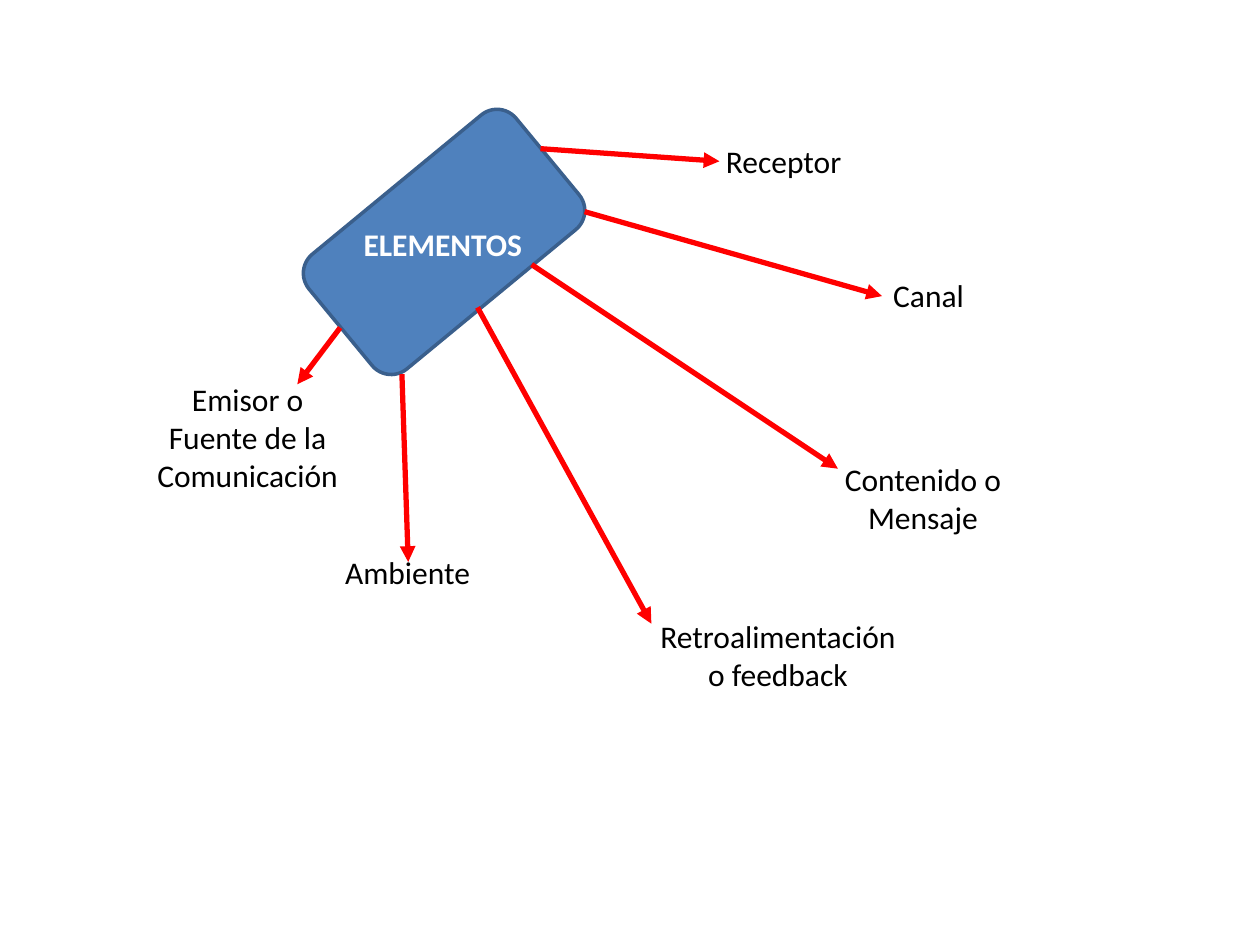
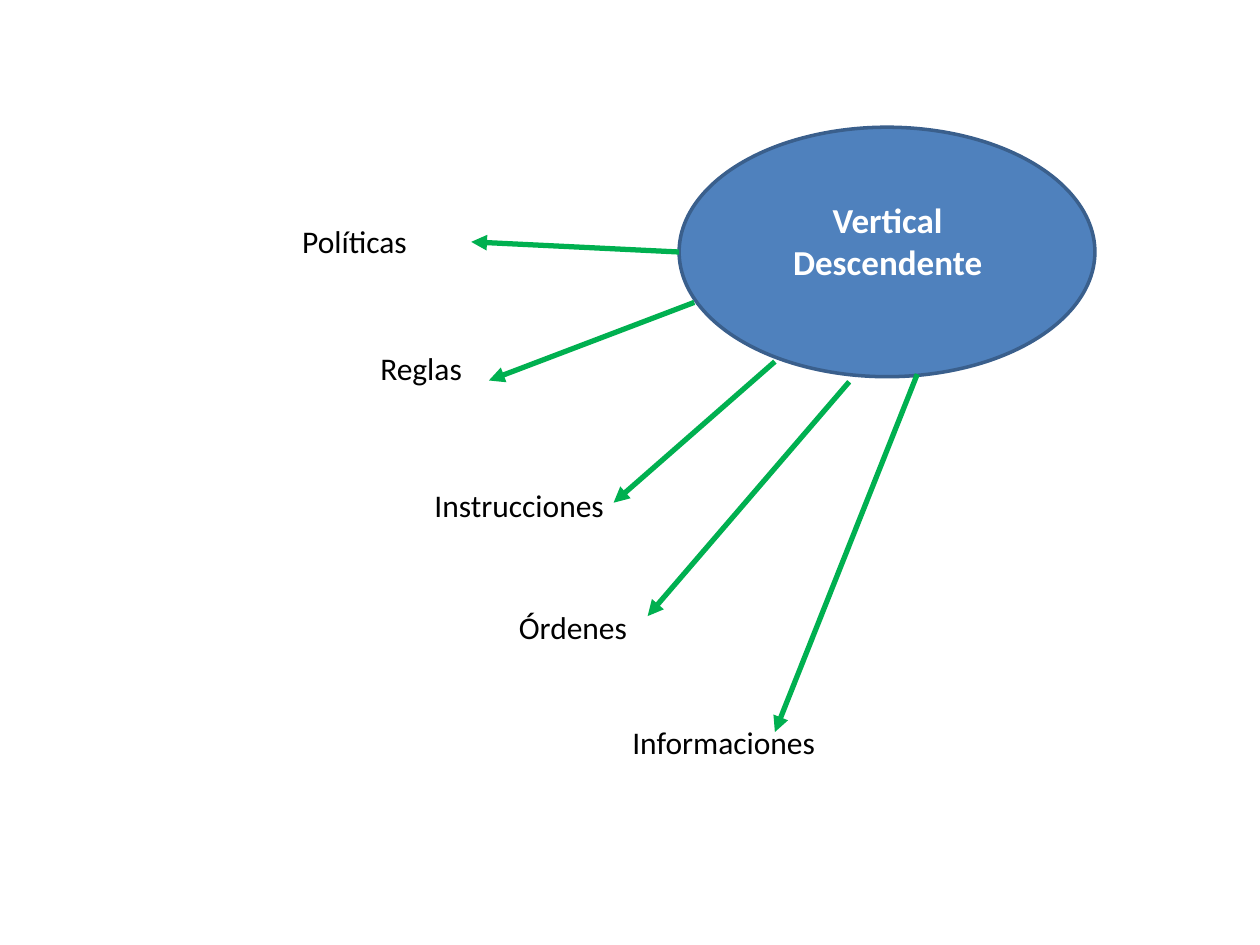
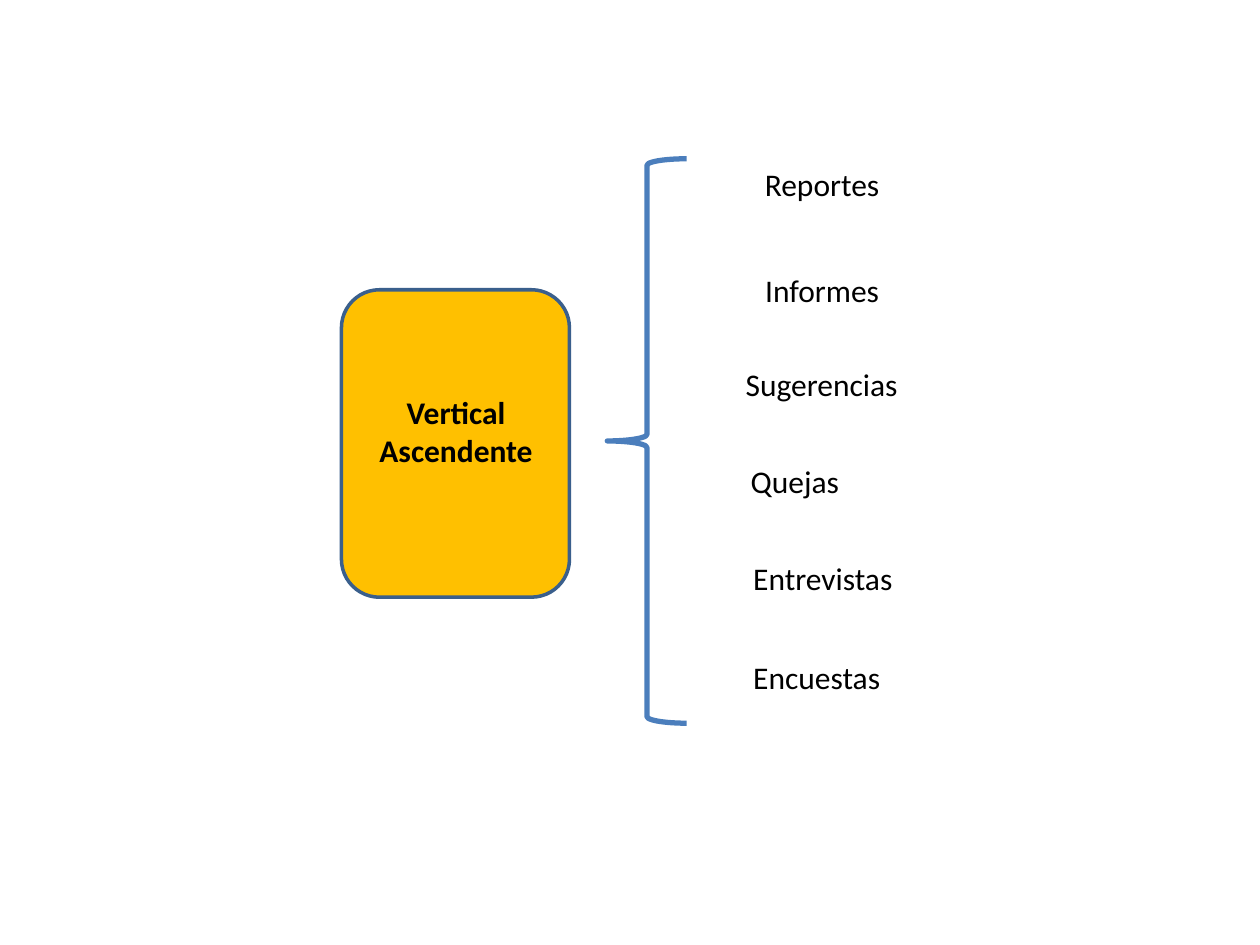
from typing import NamedTuple

from pptx import Presentation
from pptx.dml.color import RGBColor
from pptx.enum.shapes import MSO_CONNECTOR, MSO_SHAPE
from pptx.enum.text import MSO_AUTO_SIZE, PP_ALIGN
from pptx.oxml.ns import qn
from pptx.shapes.autoshape import Shape
from pptx.slide import Slide
from pptx.util import Emu, Inches, Pt
from lxml.etree import SubElement

# Shared look
FONT = "Calibri"
BLACK = RGBColor(0x00, 0x00, 0x00)
WHITE = RGBColor(0xFF, 0xFF, 0xFF)
BLUE = RGBColor(0x4F, 0x81, 0xBD)
OUTLINE = RGBColor(0x3A, 0x5F, 0x8C)
BRACE = RGBColor(0x4B, 0x7E, 0xBC)
RED = RGBColor(0xFF, 0x00, 0x00)
GREEN = RGBColor(0x00, 0xB0, 0x50)
AMBER = RGBColor(0xFF, 0xC0, 0x00)
LEFT, CENTER = PP_ALIGN.LEFT, PP_ALIGN.CENTER

# Grid of 100 columns by 75 rows, in square cells
COLUMNS = 100
WIDTH, HEIGHT = Inches(10), Inches(7.5)
CELL = WIDTH // COLUMNS


def cells(n: float) -> Emu:
    return Emu(round(n * CELL))


class Box(NamedTuple):
    col: float
    row: float
    cols: float
    rows: float


class Label(NamedTuple):
    text: str
    col: float
    row: float
    cols: float = 15.7
    lines: int = 1
    align: PP_ALIGN = LEFT
    size: int = 18
    color: RGBColor = BLACK
    bold: bool = False


class Arrow(NamedTuple):
    col1: float
    row1: float
    col2: float
    row2: float


def add_label(s: Slide, label: Label) -> None:
    # Line height is 1.22 times the font size; one cell of padding in all
    rows = label.lines * label.size * 12.2 / 72 + 1
    tb = s.shapes.add_textbox(*map(cells, (label.col, label.row, label.cols, rows)))
    tf = tb.text_frame
    tf.word_wrap = True
    tf.auto_size = MSO_AUTO_SIZE.SHAPE_TO_FIT_TEXT
    p = tf.paragraphs[0]
    p.text = label.text
    p.alignment = label.align
    p.font.name = FONT
    p.font.size = Pt(label.size)
    p.font.bold = label.bold
    p.font.color.rgb = label.color


def add_arrow(s: Slide, arrow: Arrow, color: RGBColor) -> None:
    cxn = s.shapes.add_connector(MSO_CONNECTOR.STRAIGHT, *map(cells, arrow))
    cxn.line.color.rgb = color
    cxn.line.width = Pt(3)
    SubElement(cxn.line._get_or_add_ln(), qn("a:tailEnd"), type="triangle")
    SubElement(cxn._element.spPr, qn("a:effectLst"))


def add_figure(s: Slide, kind: MSO_SHAPE, box: Box, fill: RGBColor | None = None,
               line: RGBColor = OUTLINE, width: float = 2) -> Shape:
    sp = s.shapes.add_shape(kind, *map(cells, box))
    sp.shadow.inherit = False
    if fill is None:
        sp.fill.background()
    else:
        sp.fill.solid()
        sp.fill.fore_color.rgb = fill
    sp.line.color.rgb = line
    sp.line.width = Pt(width)
    return sp


def add_diagram(s: Slide, labels: list[Label], arrows: list[Arrow],
                color: RGBColor) -> None:
    for arrow in arrows:
        add_arrow(s, arrow, color)
    for label in labels:
        add_label(s, label)


# Elements of communication
ELEMENT_LABELS = [
    Label("ELEMENTOS", 24, 17.4, 22.3, align=CENTER, color=WHITE, bold=True),
    Label("Emisor o Fuente de la Comunicación", 11.4, 29.7, 16.5, 3, CENTER),
    Label("Receptor", 51.2, 10.8, 22, align=CENTER),
    Label("Canal", 62.7, 21.4, 22, align=CENTER),
    Label("Contenido o Mensaje", 65, 36, 16.5, 2, CENTER),
    Label("Retroalimentación o feedback", 51.1, 48.5, 21.3, 2, CENTER),
    Label("Ambiente", 26.4, 43.4, 18.9),
]
ELEMENT_ARROWS = [
    Arrow(27, 26, 23.6, 30.5),
    Arrow(31.9, 29.7, 32.4, 44.6),
    Arrow(37.9, 24.4, 51.7, 49.5),
    Arrow(42.2, 21, 66.5, 37.2),
    Arrow(46.4, 16.8, 70, 23.5),
    Arrow(42.9, 11.8, 57.1, 12.8),
]

# Downward communication
DOWNWARD_LABELS = [
    Label("Vertical Descendente", 60.6, 15.3, 19.7, 2, CENTER, 20, WHITE, True),
    Label("Políticas", 23, 17.1),
    Label("Reglas", 29.2, 27.2),
    Label("Instrucciones", 33.5, 38.1),
    Label("Órdenes", 40.2, 47.8),
    Label("Informaciones", 49.2, 56.9, 18.2),
]
DOWNWARD_ARROWS = [
    Arrow(53.9, 20, 37.4, 19.2),
    Arrow(55.1, 24, 38.8, 30.2),
    Arrow(61.5, 28.7, 48.7, 39.9),
    Arrow(67.4, 30.3, 51.4, 48.9),
    Arrow(72.8, 29.7, 61.5, 58.1),
]

# Upward communication
UPWARD_LABELS = [
    Label("Vertical Ascendente", 28.7, 30.7, 15, 2, CENTER, bold=True),
    Label("Reportes", 57.4, 12.6, align=CENTER),
    Label("Informes", 57.4, 21, align=CENTER),
    Label("Sugerencias", 58.2, 28.5),
    Label("Quejas", 58.6, 36.2),
    Label("Entrevistas", 58.8, 43.9),
    Label("Encuestas", 58.8, 51.7),
]


def main() -> None:
    prs = Presentation()
    prs.slide_width, prs.slide_height = WIDTH, HEIGHT
    blank = prs.slide_layouts[6]

    s = prs.slides.add_slide(blank)
    sp = add_figure(s, MSO_SHAPE.ROUNDED_RECTANGLE, Box(24.6, 13.3, 21.3, 11.8), BLUE)
    sp.rotation = 320.5
    add_diagram(s, ELEMENT_LABELS, ELEMENT_ARROWS, RED)

    s = prs.slides.add_slide(blank)
    add_figure(s, MSO_SHAPE.OVAL, Box(53.9, 10.1, 33, 19.8), BLUE)
    add_diagram(s, DOWNWARD_LABELS, DOWNWARD_ARROWS, GREEN)

    s = prs.slides.add_slide(blank)
    add_figure(s, MSO_SHAPE.ROUNDED_RECTANGLE, Box(27.1, 23, 18.1, 24.4), AMBER)
    add_figure(s, MSO_SHAPE.LEFT_BRACE, Box(48.2, 12.6, 6.3, 44.8), line=BRACE, width=3)
    for label in UPWARD_LABELS:
        add_label(s, label)

    prs.save("out.pptx")


if __name__ == "__main__":
    main()
